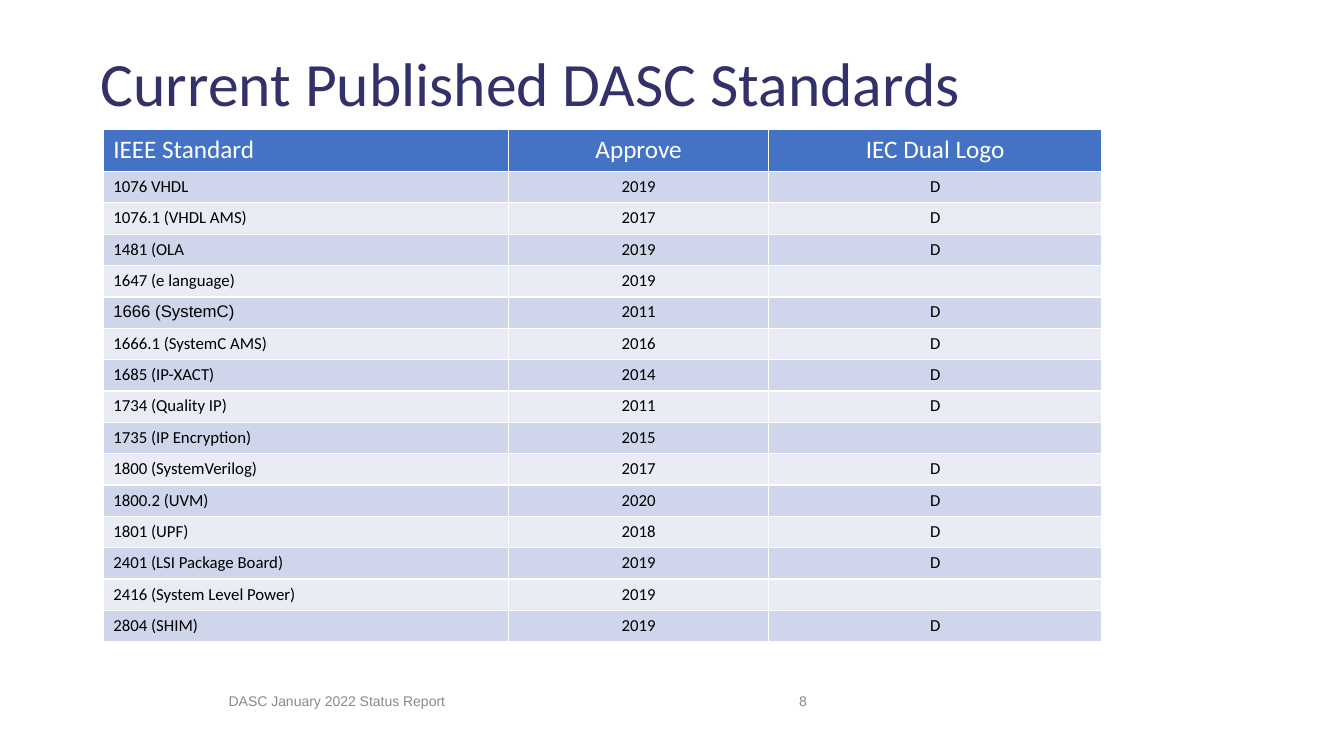
import pptx
import pptx.util
import pptx.dml.color
import pptx.enum.text
import pptx.oxml.ns
import lxml.etree

Pt = pptx.util.Pt
RGB = pptx.dml.color.RGBColor
Align = pptx.enum.text.PP_ALIGN
Anchor = pptx.enum.text.MSO_ANCHOR

# Content
TITLE = "Current Published DASC Standards"
HEAD = ("IEEE Standard", "Approve", "IEC Dual Logo")
ROWS = [
    ("1076 VHDL", "2019", "D"),
    ("1076.1 (VHDL AMS)", "2017", "D"),
    ("1481 (OLA", "2019", "D"),
    ("1647 (e language)", "2019", ""),
    ("1666 (SystemC)", "2011", "D"),
    ("1666.1 (SystemC AMS)", "2016", "D"),
    ("1685 (IP-XACT)", "2014", "D"),
    ("1734 (Quality IP)", "2011", "D"),
    ("1735 (IP Encryption)", "2015", ""),
    ("1800 (SystemVerilog)", "2017", "D"),
    ("1800.2 (UVM)", "2020", "D"),
    ("1801 (UPF)", "2018", "D"),
    ("2401 (LSI Package Board)", "2019", "D"),
    ("2416 (System Level Power)", "2019", ""),
    ("2804 (SHIM)", "2019", "D"),
]
ARIAL = {"1666 (SystemC)"}
FOOT = [("8", 563.76, 54), ("DASC January 2022 Status Report", 156.24, 246.24)]

# Colours and sizes
NAVY = RGB(0x32, 0x31, 0x6A)
BLUE = RGB(0x44, 0x72, 0xC4)
BANDS = (RGB(0xCF, 0xD5, 0xEA), RGB(0xE9, 0xEB, 0xF5))
WHITE = RGB(0xFF, 0xFF, 0xFF)
BLACK = RGB(0, 0, 0)
GREY = RGB(0x89, 0x89, 0x89)
COLS = (289.6, 185.7, 238)
TOP_H, ROW_H = 30.24, 22.42


def write(para, text, size, name, color, align=Align.LEFT):
    para.alignment = align
    if not text:
        # Keeps an empty cell as low as its row
        tag = pptx.oxml.ns.qn("a:endParaRPr")
        lxml.etree.SubElement(para._p, tag, sz=str(size * 100))
        return
    run = para.add_run()
    run.text = text
    run.font.color.rgb = color
    form = {"size": Pt(size), "name": name, "bold": False}
    for key, value in form.items():
        setattr(run.font, key, value)


def place(shape, left, top, width, height):
    box = {"left": left, "top": top, "width": width, "height": height}
    for key, value in box.items():
        setattr(shape, key, Pt(value))


deck = pptx.Presentation()
deck.slide_width, deck.slide_height = Pt(960), Pt(540)
slide = deck.slides.add_slide(deck.slide_layouts[5])

# Title
title = slide.shapes.title
place(title, 64.8, 9.36, 828, 104.4)
frame = title.text_frame
frame.word_wrap = True
frame.auto_size = pptx.enum.text.MSO_AUTO_SIZE.NONE
frame.vertical_anchor = Anchor.MIDDLE
frame.paragraphs[0].line_spacing = 0.9
write(frame.paragraphs[0], TITLE, 44, "Calibri", NAVY)

# Table of standards
grid = [HEAD] + ROWS
high = TOP_H + ROW_H * len(ROWS)
table = slide.shapes.add_table(len(grid), len(COLS), Pt(73.7), Pt(92.3),
                               Pt(sum(COLS)), Pt(high)).table
for col, width in zip(table.columns, COLS):
    col.width = Pt(width)
for r, line in enumerate(grid):
    table.rows[r].height = Pt(ROW_H if r else TOP_H)
    size, ink, back = (12, BLACK, BANDS[(r - 1) % 2]) if r else (18, WHITE, BLUE)
    for c, text in enumerate(line):
        cell = table.cell(r, c)
        cell.fill.solid()
        cell.fill.fore_color.rgb = back
        name = "Arial" if text in ARIAL else "Calibri"
        write(cell.text_frame.paragraphs[0], text, size, name, ink,
              Align.CENTER if c else Align.LEFT)

# Footer
for text, left, width in FOOT:
    box = slide.shapes.add_textbox(Pt(left), Pt(486), Pt(width), Pt(28.8))
    box.text_frame.word_wrap = True
    box.text_frame.vertical_anchor = Anchor.MIDDLE
    write(box.text_frame.paragraphs[0], text, 10, "Arial", GREY)

deck.save("out.pptx")
